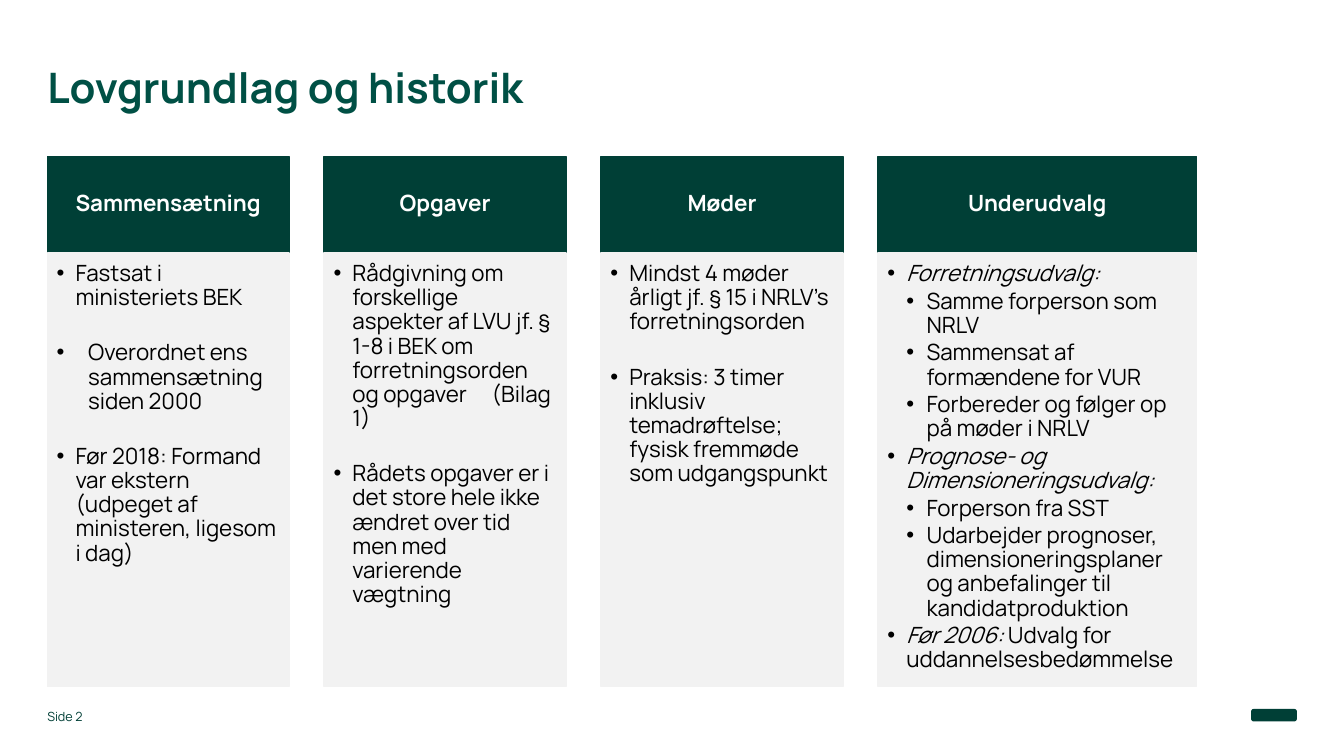
from dataclasses import dataclass

from lxml.etree import SubElement
from pptx import Presentation
from pptx.dml.color import RGBColor
from pptx.enum.shapes import MSO_SHAPE
from pptx.enum.text import MSO_ANCHOR, PP_ALIGN
from pptx.oxml.ns import qn
from pptx.util import Pt


@dataclass(frozen=True)
class Theme:
    """Colours, font and type sizes of the slide."""

    font: str = "Manrope"
    dark: RGBColor = RGBColor(0x00, 0x3F, 0x36)
    heading: RGBColor = RGBColor(0x00, 0x50, 0x45)
    panel: RGBColor = RGBColor(0xF2, 0xF2, 0xF2)
    white: RGBColor = RGBColor(0xFF, 0xFF, 0xFF)
    black: RGBColor = RGBColor(0x00, 0x00, 0x00)
    title_size: int = 30
    body_size: int = 16
    footer_size: int = 9


@dataclass(frozen=True)
class Item:
    """One bullet: an italic lead, plain text, and its place in the list."""

    text: str = ""
    lead: str = ""
    level: int = 1
    margin: float = 13.5
    hanging: float = 13.5
    after: float = 2.4
    tab: float = 0


THEME = Theme()
LEFT, PITCH = 33.8, 197.8
HEADER_TOP, HEADER_HEIGHT, PANEL_HEIGHT = 111.6, 69.1, 309.6
NARROW, WIDE = 172.8, 227.5
SECTION_GAP = 22.1
SUBITEM = {"level": 2, "margin": 28, "hanging": 14.4}

COLUMNS = [
    ("Sammensætning", NARROW, [
        Item("Fastsat i ministeriets BEK", after=SECTION_GAP),
        Item("Overordnet ens sammensætning siden 2000",
             margin=22.5, hanging=22.5, after=SECTION_GAP),
        Item("Før 2018: Formand var ekstern (udpeget af ministeren, ligesom i dag)"),
    ]),
    ("Opgaver", NARROW, [
        Item("Rådgivning om forskellige aspekter af LVU jf. § 1-8 i BEK om "
             "forretningsorden og opgaver\t(Bilag 1)", after=SECTION_GAP, tab=113),
        Item("Rådets opgaver er i det store hele ikke ændret over tid men med "
             "varierende vægtning"),
    ]),
    ("Møder", NARROW, [
        Item("Mindst 4 møder årligt jf. § 15 i NRLV’s forretningsorden", after=SECTION_GAP),
        Item("Praksis: 3 timer inklusiv temadrøftelse; fysisk fremmøde som udgangspunkt"),
    ]),
    ("Underudvalg", WIDE, [
        Item(lead="Forretningsudvalg:"),
        Item("Samme forperson som NRLV", **SUBITEM),
        Item("Sammensat af formændene for VUR", **SUBITEM),
        Item("Forbereder og følger op på møder i NRLV", **SUBITEM),
        Item(lead="Prognose- og Dimensioneringsudvalg:"),
        Item("Forperson fra SST", **SUBITEM),
        Item("Udarbejder prognoser, dimensioneringsplaner og anbefalinger til "
             "kandidatproduktion", **SUBITEM),
        Item("Udvalg for uddannelsesbedømmelse", lead="Før 2006: "),
    ]),
]


def set_format(target, values):
    """Set each attribute named in values on the target."""
    for attribute, value in values.items():
        setattr(target, attribute, value)


def set_frame(frame, insets, anchor):
    """Set wrapping, anchor and the left, top, right and bottom insets."""
    sides = ("margin_left", "margin_top", "margin_right", "margin_bottom")
    set_format(frame, {"word_wrap": True, "vertical_anchor": anchor,
                       **{side: Pt(inset) for side, inset in zip(sides, insets)}})


def add_run(paragraph, text, size, color, **style):
    """Append a run in the theme font."""
    run = paragraph.add_run()
    run.text = text
    set_format(run.font, {"name": THEME.font, "size": Pt(size), **style})
    run.font.color.rgb = color


def add_label(slide, box, text, size, color, anchor, spacing=1.0, **style):
    """Add a one-line text box without insets."""
    frame = slide.shapes.add_textbox(*map(Pt, box)).text_frame
    set_frame(frame, (0, 0, 0, 0), anchor)
    paragraph = frame.paragraphs[0]
    paragraph.line_spacing = spacing
    add_run(paragraph, text, size, color, **style)


def add_block(slide, box, color, kind=MSO_SHAPE.RECTANGLE):
    """Add a flat shape whose fill and line share one colour."""
    block = slide.shapes.add_shape(kind, *map(Pt, box))
    block.shadow.inherit = False
    block.fill.solid()
    block.fill.fore_color.rgb = color
    block.line.color.rgb = color
    block.line.width = Pt(1)
    return block


def add_header(slide, box, heading):
    """Add the dark heading block of a column."""
    frame = add_block(slide, box, THEME.dark).text_frame
    set_frame(frame, (8.6, 5, 8.6, 5), MSO_ANCHOR.MIDDLE)
    paragraph = frame.paragraphs[0]
    set_format(paragraph, {"alignment": PP_ALIGN.CENTER, "line_spacing": 0.9})
    add_run(paragraph, heading, THEME.body_size, THEME.white, bold=True)


def add_bullet(paragraph, item):
    """Give a paragraph its hanging bullet and optional tab stop."""
    properties = paragraph._p.get_or_add_pPr()
    properties.set("marL", str(Pt(item.margin)))
    properties.set("indent", str(-Pt(item.hanging)))
    SubElement(properties, qn("a:buFont"), typeface="Arial")
    SubElement(properties, qn("a:buChar"), char="•")
    if item.tab:
        stops = SubElement(properties, qn("a:tabLst"))
        SubElement(stops, qn("a:tab"), pos=str(Pt(item.tab)), algn="l")


def add_panel(slide, box, items):
    """Add the light panel with the bullets of a column."""
    frame = add_block(slide, box, THEME.panel).text_frame
    set_frame(frame, (6.7, 6.7, 9, 10), MSO_ANCHOR.TOP)
    for index, item in enumerate(items):
        paragraph = frame.add_paragraph() if index else frame.paragraphs[0]
        add_bullet(paragraph, item)
        set_format(paragraph, {"level": item.level, "alignment": PP_ALIGN.LEFT,
                               "line_spacing": 0.9, "space_before": Pt(0),
                               "space_after": Pt(item.after)})
        for text, italic in ((item.lead, True), (item.text, False)):
            if text:
                add_run(paragraph, text, THEME.body_size, THEME.black, italic=italic)


def main():
    """Build the slide and save it."""
    deck = Presentation()
    set_format(deck, {"slide_width": Pt(960), "slide_height": Pt(540)})
    slide = deck.slides.add_slide(deck.slide_layouts[6])
    add_label(slide, (LEFT, 49.7, 883.4, 73.4), "Lovgrundlag og historik",
              THEME.title_size, THEME.heading, MSO_ANCHOR.TOP, 0.83, bold=True)
    for index, (heading, width, items) in enumerate(COLUMNS):
        left = LEFT + index * PITCH
        add_header(slide, (left, HEADER_TOP, width, HEADER_HEIGHT), heading)
        add_panel(slide, (left, HEADER_TOP + HEADER_HEIGHT, width, PANEL_HEIGHT), items)
    add_label(slide, (LEFT, 502.6, 53.3, 14.4), "Side 2",
              THEME.footer_size, THEME.dark, MSO_ANCHOR.BOTTOM)
    add_block(slide, (894.2, 506.9, 31.7, 7.9), THEME.dark, MSO_SHAPE.ROUNDED_RECTANGLE)
    deck.save("out.pptx")


if __name__ == "__main__":
    main()
